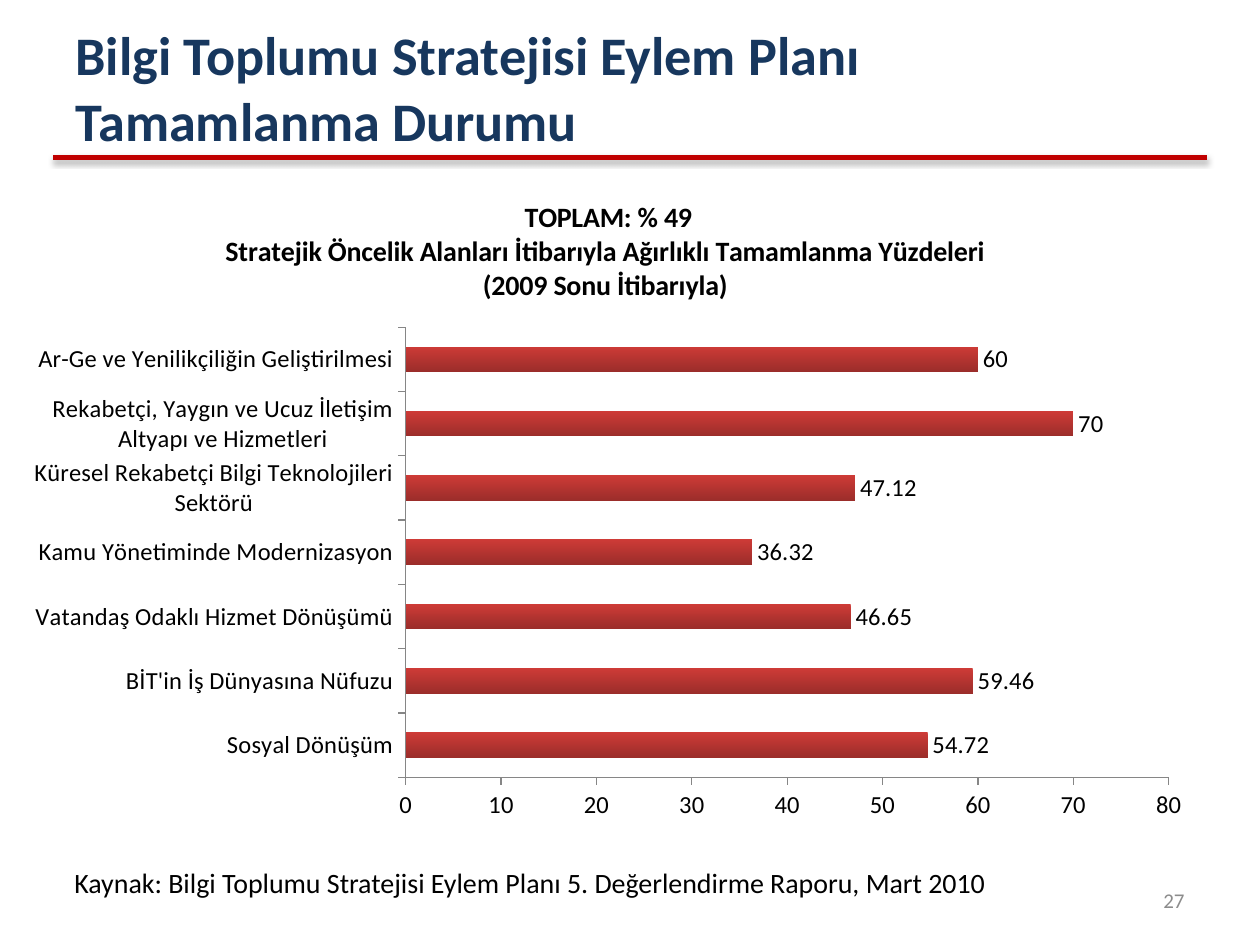
from lxml.etree import SubElement
from pptx import Presentation
from pptx.chart.data import CategoryChartData
from pptx.dml.color import RGBColor
from pptx.enum.chart import XL_CHART_TYPE, XL_LABEL_POSITION, XL_TICK_MARK
from pptx.enum.shapes import MSO_CONNECTOR
from pptx.enum.text import MSO_ANCHOR, MSO_AUTO_SIZE, PP_ALIGN
from pptx.oxml import parse_xml
from pptx.oxml.ns import nsdecls, qn
from pptx.util import Cm, Pt

TITLE = ["Bilgi Toplumu Stratejisi Eylem Planı ", "Tamamlanma Durumu"]
CHART_TITLE = [
    "TOPLAM: % 49",
    "Stratejik Öncelik Alanları İtibarıyla Ağırlıklı Tamamlanma Yüzdeleri ",
    "(2009 Sonu İtibarıyla) ",
]
COMPLETION = [
    ("Sosyal Dönüşüm", 54.72),
    ("BİT'in İş Dünyasına Nüfuzu", 59.46),
    ("Vatandaş Odaklı Hizmet Dönüşümü", 46.65),
    ("Kamu Yönetiminde Modernizasyon", 36.32),
    ("Küresel Rekabetçi Bilgi Teknolojileri Sektörü", 47.12),
    ("Rekabetçi, Yaygın ve Ucuz İletişim Altyapı ve Hizmetleri", 70),
    ("Ar-Ge ve Yenilikçiliğin Geliştirilmesi", 60),
]
SOURCE = "Kaynak: Bilgi Toplumu Stratejisi Eylem Planı 5. Değerlendirme Raporu, Mart 2010"
PAGE = "27"
PLOT = {"x": 0.33, "y": 0.23, "w": 0.64, "h": 0.68}
THEME = {
    "font": "Calibri",
    "navy": "17375E", "black": "000000", "gray": "8C8C8C", "axis": "868686",
    "rule": "C00000", "bar_top": "CE3B37", "bar_bottom": "9B2D2A",
    "title": 31, "heading": 16, "source": 16, "chart": 14, "page": 12,
}


def rgb(name):
    return RGBColor.from_string(THEME[name])


def style(font, size, color, bold=False):
    font.name = THEME["font"]
    font.size = Pt(THEME[size])
    font.bold = bold
    font.color.rgb = rgb(color)


def add_run(p, text, size, color, bold=False):
    r = p.add_run()
    r.text = text
    style(r.font, size, color, bold)


def add_text(s, box, text, size, color, align=PP_ALIGN.LEFT, anchor=MSO_ANCHOR.TOP):
    tf = s.shapes.add_textbox(*map(Cm, box)).text_frame
    tf.word_wrap = True
    tf.vertical_anchor = anchor
    p = tf.paragraphs[0]
    p.alignment = align
    add_run(p, text, size, color)


def add_title(s):
    sp = s.shapes.title
    sp.left, sp.top, sp.width, sp.height = map(Cm, (1.27, 0.58, 24.84, 2.34))
    tf = sp.text_frame
    tf.word_wrap = True
    tf.auto_size = MSO_AUTO_SIZE.NONE
    tf.vertical_anchor = MSO_ANCHOR.MIDDLE
    p = tf.paragraphs[0]
    p.alignment = PP_ALIGN.LEFT
    for i, line in enumerate(TITLE):
        if i:
            p.add_line_break()
        add_run(p, line, "title", "navy", True)


def add_rule(s):
    line = s.shapes.add_connector(MSO_CONNECTOR.STRAIGHT, Cm(1.07), Cm(3.18), Cm(24.33), Cm(3.18))
    line.line.color.rgb = rgb("rule")
    line.line.width = Pt(3)
    line._element.spPr.append(parse_xml(
        f'<a:effectLst {nsdecls("a")}><a:outerShdw blurRad="{Pt(3.1)}" dist="{Pt(1.8)}" '
        f'dir="5400000" rotWithShape="0"><a:srgbClr val="{THEME["black"]}">'
        '<a:alpha val="35000"/></a:srgbClr></a:outerShdw></a:effectLst>'))


def place_plot(chart):
    area = chart._chartSpace.chart.plotArea
    layout = area.find(qn("c:layout"))
    if layout is None:
        layout = area.makeelement(qn("c:layout"))
        area.insert(0, layout)
    manual = SubElement(layout, qn("c:manualLayout"))
    settings = {"layoutTarget": "inner", "xMode": "edge", "yMode": "edge", **PLOT}
    for tag, value in settings.items():
        SubElement(manual, qn(f"c:{tag}")).set("val", str(value))


def add_completion_chart(s):
    data = CategoryChartData()
    data.categories = [name for name, _ in COMPLETION]
    data.add_series("Series 1", [value for _, value in COMPLETION])
    box = map(Cm, (0.25, 3.53, 24.03, 13.34))
    chart = s.shapes.add_chart(XL_CHART_TYPE.BAR_CLUSTERED, *box, data).chart
    style(chart.font, "chart", "black")
    chart.has_legend = False
    chart.has_title = True
    tf = chart.chart_title.text_frame
    for i, line in enumerate(CHART_TITLE):
        p = tf.add_paragraph() if i else tf.paragraphs[0]
        add_run(p, line, "heading", "black", True)
    chart.chart_title.include_in_layout = False

    for axis in (chart.category_axis, chart.value_axis):
        axis.has_major_gridlines = False
        axis.major_tick_mark = XL_TICK_MARK.OUTSIDE
        axis.format.line.color.rgb = rgb("axis")
        axis.format.line.width = Pt(0.75)
    chart.value_axis.minimum_scale = 0
    chart.value_axis.maximum_scale = 80
    chart.value_axis.major_unit = 10

    plot = chart.plots[0]
    plot.gap_width = 150
    plot.vary_by_categories = False
    plot.has_data_labels = True
    labels = plot.data_labels
    labels.show_value = True
    labels.position = XL_LABEL_POSITION.OUTSIDE_END
    style(labels.font, "chart", "black")
    fill = plot.series[0].format.fill
    fill.gradient()
    fill.gradient_angle = 270
    for stop, color in zip(fill.gradient_stops, ("bar_top", "bar_bottom")):
        stop.color.rgb = rgb(color)
    place_plot(chart)


def main():
    prs = Presentation()
    prs.slide_width, prs.slide_height = Cm(25.4), Cm(19.05)
    s = prs.slides.add_slide(prs.slide_layouts[5])
    add_title(s)
    add_text(s, (18.2, 17.65, 5.93, 1.01), PAGE, "page", "gray", PP_ALIGN.RIGHT, MSO_ANCHOR.MIDDLE)
    add_completion_chart(s)
    add_text(s, (1.25, 17.32, 22.25, 0.94), SOURCE, "source", "black")
    add_rule(s)
    prs.save("out.pptx")


if __name__ == "__main__":
    main()
